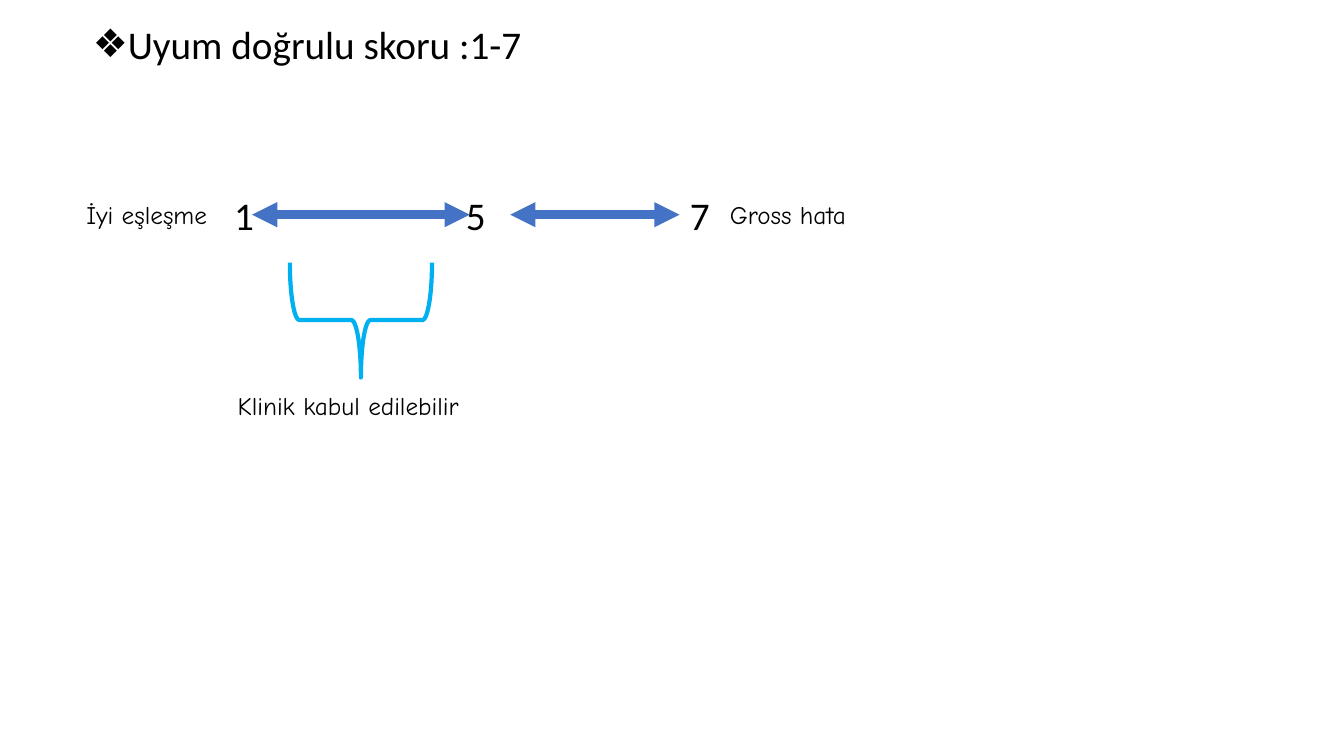
from dataclasses import dataclass

from lxml import etree
from pptx import Presentation
from pptx.dml.color import RGBColor
from pptx.enum.shapes import MSO_CONNECTOR, MSO_SHAPE
from pptx.enum.text import MSO_ANCHOR, MSO_AUTO_SIZE, PP_ALIGN
from pptx.oxml.ns import qn
from pptx.util import Inches, Pt

STRAIGHT = MSO_CONNECTOR.STRAIGHT
LEFT_BRACE = MSO_SHAPE.LEFT_BRACE
TOP = MSO_ANCHOR.TOP
NO_AUTOFIT = MSO_AUTO_SIZE.NONE
LEFT, CENTER = PP_ALIGN.LEFT, PP_ALIGN.CENTER
TITLE_AND_CONTENT = 1


@dataclass(frozen=True)
class Theme:
    text: RGBColor = RGBColor(0x00, 0x00, 0x00)
    arrow: RGBColor = RGBColor(0x44, 0x72, 0xC4)
    brace: RGBColor = RGBColor(0x00, 0xB0, 0xF0)
    body_font: str = "Calibri"
    label_font: str = "Comic Neue"
    body_size: int = 28
    label_size: int = 18


THEME = Theme()
SCALE_Y = 2.13
SCORE_WIDTH = 0.5
SCORE_CENTERS = (("1", 2.42), ("5", 4.72), ("7", 6.94))
ARROWS = ((2.5, 4.66), (5.06, 6.74))
LABELS = (
    ("İyi eşleşme", 0.76, 1.93, 1.54),
    ("Gross hata", 7.14, 1.93, 1.47),
    ("Klinik kabul edilebilir", 2.26, 3.82, 2.64),
)


def write(p, text, font=THEME.body_font, size=THEME.body_size, color=THEME.text, align=LEFT):
    p.alignment = align
    r = p.add_run()
    r.text = text
    r.font.name = font
    r.font.size = Pt(size)
    r.font.color.rgb = color


def fill_body(sp, text):
    sp.left, sp.top = Inches(0.82), Inches(0.2)
    sp.width, sp.height = Inches(11.5), Inches(6.54)
    tf = sp.text_frame
    tf.auto_size = NO_AUTOFIT
    tf.vertical_anchor = TOP
    p = tf.paragraphs[0]
    p.line_spacing = 0.9
    p.space_before = Pt(10)
    pPr = p._p.get_or_add_pPr()
    pPr.set("marL", str(Inches(0.25)))
    pPr.set("indent", str(-Inches(0.25)))
    etree.SubElement(pPr, qn("a:buChar"), char="❖")
    write(p, text)


def add_text(s, text, left, top, width, height, **text_format):
    sp = s.shapes.add_textbox(Inches(left), Inches(top), Inches(width), Inches(height))
    tf = sp.text_frame
    tf.word_wrap = True
    write(tf.paragraphs[0], text, **text_format)


def add_double_arrow(s, start, end, y):
    line = s.shapes.add_connector(STRAIGHT, Inches(start), Inches(y), Inches(end), Inches(y))
    line.line.color.rgb = THEME.arrow
    line.line.width = Pt(6)
    ln = line.line._get_or_add_ln()
    for end_tag in ("a:headEnd", "a:tailEnd"):
        etree.SubElement(ln, qn(end_tag), type="triangle")
    etree.SubElement(line._element.spPr, qn("a:effectLst"))


def add_brace(s, left, top, width, height):
    """Add a brace turned so that its tip points down."""
    sp = s.shapes.add_shape(LEFT_BRACE, Inches(left), Inches(top), Inches(width), Inches(height))
    sp.rotation = 270
    sp.shadow.inherit = False
    sp.fill.background()
    sp.line.color.rgb = THEME.brace
    sp.line.width = Pt(3)


def main():
    prs = Presentation()
    prs.slide_width, prs.slide_height = Inches(13.33), Inches(7.5)
    s = prs.slides.add_slide(prs.slide_layouts[TITLE_AND_CONTENT])
    title = s.shapes.title._element
    title.getparent().remove(title)
    fill_body(s.placeholders[1], "Uyum doğrulu skoru :1-7")
    for score, center in SCORE_CENTERS:
        add_text(s, score, center - SCORE_WIDTH / 2, 1.85, SCORE_WIDTH, 0.57, align=CENTER)
    for start, end in ARROWS:
        add_double_arrow(s, start, end, SCALE_Y)
    add_brace(s, 3.01, 2.47, 1.14, 1.41)
    for text, left, top, width in LABELS:
        add_text(s, text, left, top, width, 0.4, font=THEME.label_font, size=THEME.label_size)
    prs.save("out.pptx")


if __name__ == "__main__":
    main()
